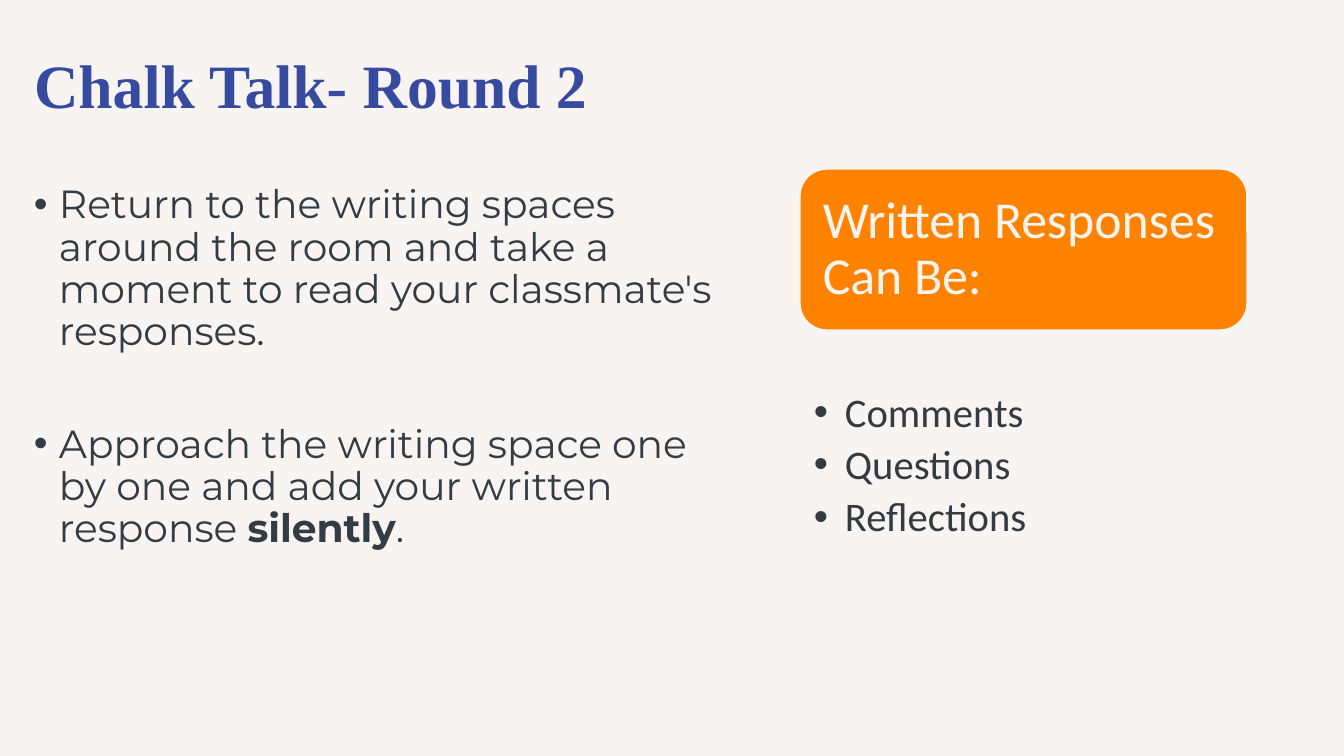
import pptx
import pptx.util
import pptx.dml.color
import pptx.enum.shapes
import pptx.enum.text
import pptx.oxml
import pptx.oxml.ns

EMU_PER_PX = 9525 / 1.05  # 100.8 px to the inch
COLOURS = {
    "background": "F7F4F1",
    "title": "364B9F",
    "body": "333C42",
    "list": "333B41",
    "callout": "FF8300",
}
ALIGN = pptx.enum.text.PP_ALIGN
ANCHOR = pptx.enum.text.MSO_ANCHOR


def px(length):
    return pptx.util.Emu(round(length * EMU_PER_PX))


def colour(name):
    return pptx.dml.color.RGBColor.from_string(COLOURS[name])


def set_frame(frame, anchor, margins):
    """Wrap the text; margins are left, top, right, bottom in px."""
    frame.word_wrap = True
    frame.auto_size = pptx.enum.text.MSO_AUTO_SIZE.NONE
    frame.vertical_anchor = anchor
    (frame.margin_left, frame.margin_top,
     frame.margin_right, frame.margin_bottom) = map(px, margins)


def style_paragraph(para, font_name, size, colour_name, bold=False):
    para.alignment = ALIGN.LEFT
    para.line_spacing = 0.9
    para.font.name = font_name
    para.font.size = pptx.util.Pt(size)
    para.font.bold = bold
    para.font.color.rgb = colour(colour_name)


def add_bullet(para, indent):
    properties = para._p.get_or_add_pPr()
    properties.set("marL", str(px(indent)))
    properties.set("indent", str(-px(indent)))
    for tag, attribute, value in (("buFont", "typeface", "Arial"), ("buChar", "char", "•")):
        bullet = pptx.oxml.parse_xml(f'<a:{tag} {pptx.oxml.ns.nsdecls("a")}/>')
        bullet.set(attribute, value)
        properties.append(bullet)


def add_bullet_box(page, box, margins, items, indent, gap, font):
    """Each item is a list of (text, bold) spans; gap is in points."""
    frame = page.shapes.add_textbox(*map(px, box)).text_frame
    set_frame(frame, ANCHOR.TOP, margins)
    for number, item in enumerate(items):
        para = frame.add_paragraph() if number else frame.paragraphs[0]
        add_bullet(para, indent)
        style_paragraph(para, *font)
        if number:
            para.space_before = pptx.util.Pt(gap)
        for text, bold in item:
            span = para.add_run()
            span.text = text
            if bold:
                span.font.bold = True


def place_title(page, box):
    title = page.shapes.title
    title.left, title.top, title.width, title.height = map(px, box)
    set_frame(title.text_frame, ANCHOR.MIDDLE, (10, 5, 10, 5))
    title.text_frame.text = "Chalk Talk- Round 2"
    style_paragraph(title.text_frame.paragraphs[0], "Times New Roman", 44, "title", bold=True)


def add_instructions(page, box):
    items = [
        [("Return to the writing spaces around the room and take a moment "
          "to read your classmate's responses.", False)],
        [("Approach the writing space one by one and add your written response ", False),
         ("silently", True), (".", False)],
    ]
    add_bullet_box(page, box, (10, 5, 10, 5), items, 25, 50, ("Montserrat", 28, "body"))


def add_responses(page, box):
    """Orange heading at the top of the box, with the kinds of response below."""
    left, top, width, height = box
    heading_height, list_offset = 161, 218
    heading = page.shapes.add_shape(
        pptx.enum.shapes.MSO_SHAPE.ROUNDED_RECTANGLE,
        *map(px, (left, top, width, heading_height)))
    heading.shadow.inherit = False
    heading.fill.solid()
    heading.fill.fore_color.rgb = colour("callout")
    heading.line.color.rgb = colour("background")
    heading.line.width = pptx.util.Pt(1)
    # The rounded corners already inset the text by 8 px.
    set_frame(heading.text_frame, ANCHOR.MIDDLE, (15, 15, 10, 15))
    heading.text_frame.text = "Written Responses Can Be:"
    style_paragraph(heading.text_frame.paragraphs[0], "Calibri", 37, "background")

    items = [[(word, False)] for word in ("Comments", "Questions", "Reflections")]
    list_box = (left, top + list_offset, width, height - list_offset)
    add_bullet_box(page, list_box, (14, 5, 29, 5), items, 31, 6, ("Calibri", 29, "list"))


def main():
    deck = pptx.Presentation()
    deck.slide_width, deck.slide_height = px(1344), px(756)
    page = deck.slides.add_slide(deck.slide_layouts[5])
    page.background.fill.solid()
    page.background.fill.fore_color.rgb = colour("background")
    place_title(page, (24, 16, 1297, 146))
    add_instructions(page, (24, 180, 711, 493))
    add_responses(page, (800, 169, 447, 382))
    deck.save("out.pptx")


if __name__ == "__main__":
    main()
